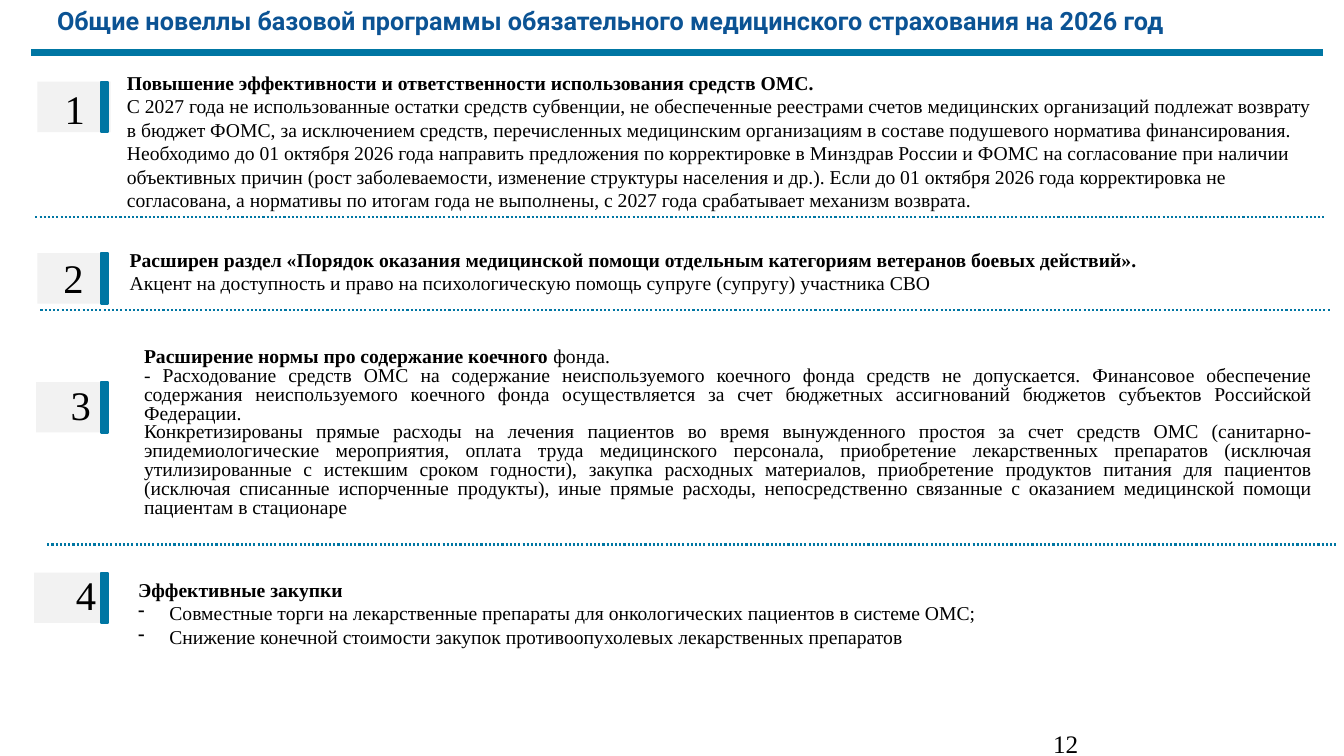
from dataclasses import dataclass

from lxml.etree import SubElement
from pptx import Presentation
from pptx.dml.color import RGBColor
from pptx.enum.dml import MSO_LINE
from pptx.enum.shapes import MSO_CONNECTOR, MSO_SHAPE
from pptx.enum.text import MSO_ANCHOR, MSO_AUTO_SIZE, PP_ALIGN
from pptx.oxml.ns import qn
from pptx.util import Cm, Pt


@dataclass(frozen=True)
class Theme:
    """Colours, fonts and type sizes of the slide."""
    title: RGBColor = RGBColor(0x0B, 0x53, 0x94)
    accent: RGBColor = RGBColor(0x00, 0x76, 0xA3)
    badge: RGBColor = RGBColor(0xF2, 0xF2, 0xF2)
    ink: RGBColor = RGBColor(0, 0, 0)
    title_font: str = "Roboto"
    body_font: str = "Times New Roman"
    title_size: int = 18
    body_size: int = 14
    number_size: int = 29
    page_size: int = 18


@dataclass(frozen=True)
class Section:
    """A numbered section: badge, number and body boxes in centimetres."""
    badge: tuple
    number: tuple
    body: tuple
    paragraphs: tuple
    align: PP_ALIGN = PP_ALIGN.LEFT
    spacing: float = 1.0
    bulleted: bool = False


THEME = Theme()
RULE_LENGTH = 32.54
BAR_LEFT, BAR_WIDTH = 2.54, 0.18
BADGE_HEIGHT = 1.27
NUMBER_SIZE = (0.81, 1.19)
BULLET_INDENT = 0.79
DIVIDERS = ((0.89, 5.46), (1.02, 7.82), (1.19, 13.72))

SECTIONS = (
    Section(
        badge=(0.94, 2.06, 1.85), number=(1.45, 2.13), body=(2.95, 1.65, 30.53, 3.84),
        paragraphs=(
            (("Повышение эффективности и ответственности использования средств ОМС.", True),),
            (("С 2027 года не использованные остатки средств субвенции, не обеспеченные реестрами "
              "счетов медицинских организаций подлежат возврату в бюджет ФОМС, за исключением "
              "средств, перечисленных медицинским организациям в составе подушевого норматива "
              "финансирования. Необходимо до 01 октября 2026 года направить предложения по "
              "корректировке в Минздрав России и ФОМС на согласование при наличии объективных "
              "причин (рост заболеваемости, изменение структуры населения и др.). Если до "
              "01 октября 2026 года корректировка не согласована, а нормативы по итогам года "
              "не выполнены, с 2027 года срабатывает механизм возврата.", False),),
        ),
    ),
    Section(
        badge=(0.94, 6.38, 1.78), number=(1.42, 6.4), body=(3.02, 6.12, 29.72, 1.45),
        align=PP_ALIGN.JUSTIFY,
        paragraphs=(
            (("Расширен раздел «Порядок оказания медицинской помощи отдельным категориям "
              "ветеранов боевых действий».", True),),
            (("Акцент на доступность и право на психологическую помощь супруге (супругу) "
              "участника СВО", False),),
        ),
    ),
    Section(
        badge=(0.91, 9.63, 1.78), number=(1.6, 9.6), body=(3.38, 8.66, 29.95, 5.05),
        align=PP_ALIGN.JUSTIFY, spacing=0.8,
        paragraphs=(
            (("Расширение нормы про содержание коечного ", True), ("фонда.", False)),
            (("- Расходование средств ОМС на содержание неиспользуемого коечного фонда средств "
              "не допускается. Финансовое обеспечение содержания неиспользуемого коечного фонда "
              "осуществляется за счет бюджетных ассигнований бюджетов субъектов Российской "
              "Федерации.", False),),
            (("Конкретизированы прямые расходы на лечения пациентов во время вынужденного простоя "
              "за счет средств ОМС (санитарно-эпидемиологические мероприятия, оплата труда "
              "медицинского персонала, приобретение лекарственных препаратов (исключая "
              "утилизированные с истекшим сроком годности), закупка расходных материалов, "
              "приобретение продуктов питания для пациентов (исключая списанные испорченные "
              "продукты), иные прямые расходы, непосредственно связанные с оказанием медицинской "
              "помощи пациентам в стационаре", False),),
        ),
    ),
    Section(
        badge=(0.86, 14.43, 1.78), number=(1.73, 14.38), body=(3.23, 14.43, 29.95, 2.64),
        bulleted=True,
        paragraphs=(
            (("Эффективные закупки", True),),
            (("Совместные торги на лекарственные препараты для онкологических пациентов "
              "в системе ОМС;", False),),
            (("Снижение конечной стоимости закупок противоопухолевых лекарственных "
              "препаратов", False),),
        ),
    ),
)


def add_text_box(page, box):
    """Add a wrapping text box and return its frame."""
    frame = page.shapes.add_textbox(*map(Cm, box)).text_frame
    frame.word_wrap = True
    return frame


def add_span(para, text, size, bold=False, font=THEME.body_font, color=THEME.ink):
    """Append one formatted run to a paragraph."""
    span = para.add_run()
    span.text = text
    span.font.name = font
    span.font.size = Pt(size)
    span.font.bold = bold
    span.font.color.rgb = color


def add_block(page, box, color, outlined=False):
    """Add a flat rectangle."""
    block = page.shapes.add_shape(MSO_SHAPE.RECTANGLE, *map(Cm, box))
    block.shadow.inherit = False
    block.fill.solid()
    block.fill.fore_color.rgb = color
    if outlined:
        block.line.color.rgb = color
        block.line.width = Pt(1.5)
    else:
        block.line.fill.background()


def add_rule(page, left, top, width, dash=None):
    """Add a horizontal accent line of the common length."""
    rule = page.shapes.add_connector(
        MSO_CONNECTOR.STRAIGHT, Cm(left), Cm(top), Cm(left + RULE_LENGTH), Cm(top))
    rule.line.color.rgb = THEME.accent
    rule.line.width = Pt(width)
    if dash is not None:
        rule.line.dash_style = dash
    SubElement(rule._element.spPr, qn("a:effectLst"))


def add_bullet(para):
    """Give a paragraph a hanging dash."""
    properties = para._p.get_or_add_pPr()
    properties.set("marL", str(Cm(BULLET_INDENT)))
    properties.set("indent", str(-Cm(BULLET_INDENT)))
    SubElement(properties, qn("a:buFontTx"))
    SubElement(properties, qn("a:buChar")).set("char", "-")


def add_header(page, box):
    """Add the slide title and the rule below it."""
    left, top, width, height = box
    frame = add_text_box(page, box)
    add_span(frame.paragraphs[0],
             "Общие новеллы базовой программы обязательного медицинского страхования на 2026 год",
             THEME.title_size, True, THEME.title_font, THEME.title)
    add_rule(page, left - 0.4, top + 1.32, 4.5)


def add_badge(page, box, number_place, number):
    """Add the grey badge, its accent bar and its number."""
    left, top, width = box
    add_block(page, (left, top, width, BADGE_HEIGHT), THEME.badge)
    add_block(page, (BAR_LEFT, top, BAR_WIDTH, BADGE_HEIGHT), THEME.accent, outlined=True)
    frame = add_text_box(page, number_place + NUMBER_SIZE)
    frame.margin_left = frame.margin_right = Cm(0.18)
    frame.margin_top = frame.margin_bottom = Cm(0.1)
    frame.vertical_anchor = MSO_ANCHOR.MIDDLE
    para = frame.paragraphs[0]
    para.alignment = PP_ALIGN.CENTER
    add_span(para, str(number), THEME.number_size)


def add_body(page, section):
    """Add the heading and details of a section."""
    frame = add_text_box(page, section.body)
    frame.auto_size = MSO_AUTO_SIZE.SHAPE_TO_FIT_TEXT
    for index, spans in enumerate(section.paragraphs):
        para = frame.paragraphs[0] if index == 0 else frame.add_paragraph()
        para.alignment = section.align
        para.line_spacing = section.spacing
        if section.bulleted and index > 0:
            add_bullet(para)
        for text, bold in spans:
            add_span(para, text, THEME.body_size, bold)


def main():
    """Build and save the deck."""
    deck = Presentation()
    deck.slide_width, deck.slide_height = Cm(33.87), Cm(19.05)
    page = deck.slides.add_slide(deck.slide_layouts[6])
    add_header(page, (1.19, 0, 31.78, 1.02))
    for number, section in enumerate(SECTIONS, start=1):
        add_badge(page, section.badge, section.number, number)
        add_body(page, section)
    for left, top in DIVIDERS:
        add_rule(page, left, top, 1.5, MSO_LINE.ROUND_DOT)
    footer = add_text_box(page, (26.29, 18.24, 7.58, 1.02))
    add_span(footer.paragraphs[0], "12", THEME.page_size)
    deck.save("out.pptx")


if __name__ == "__main__":
    main()
